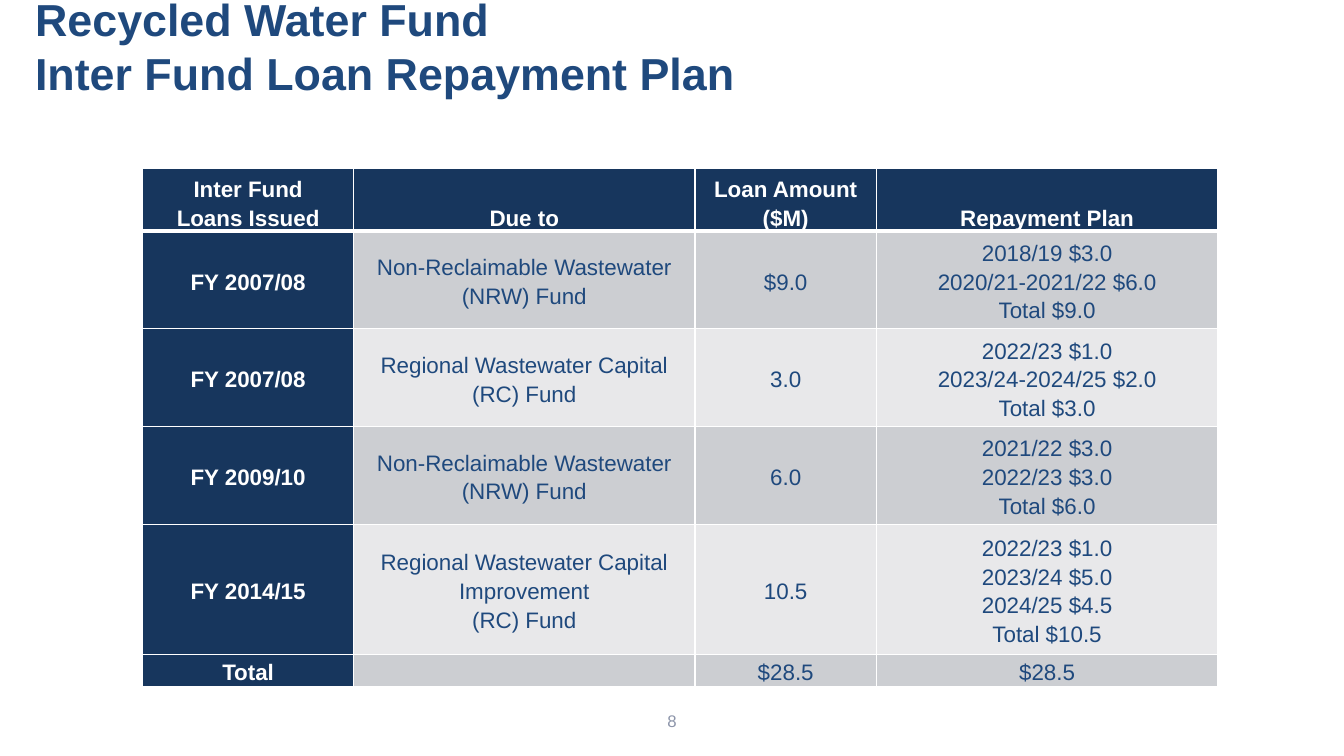
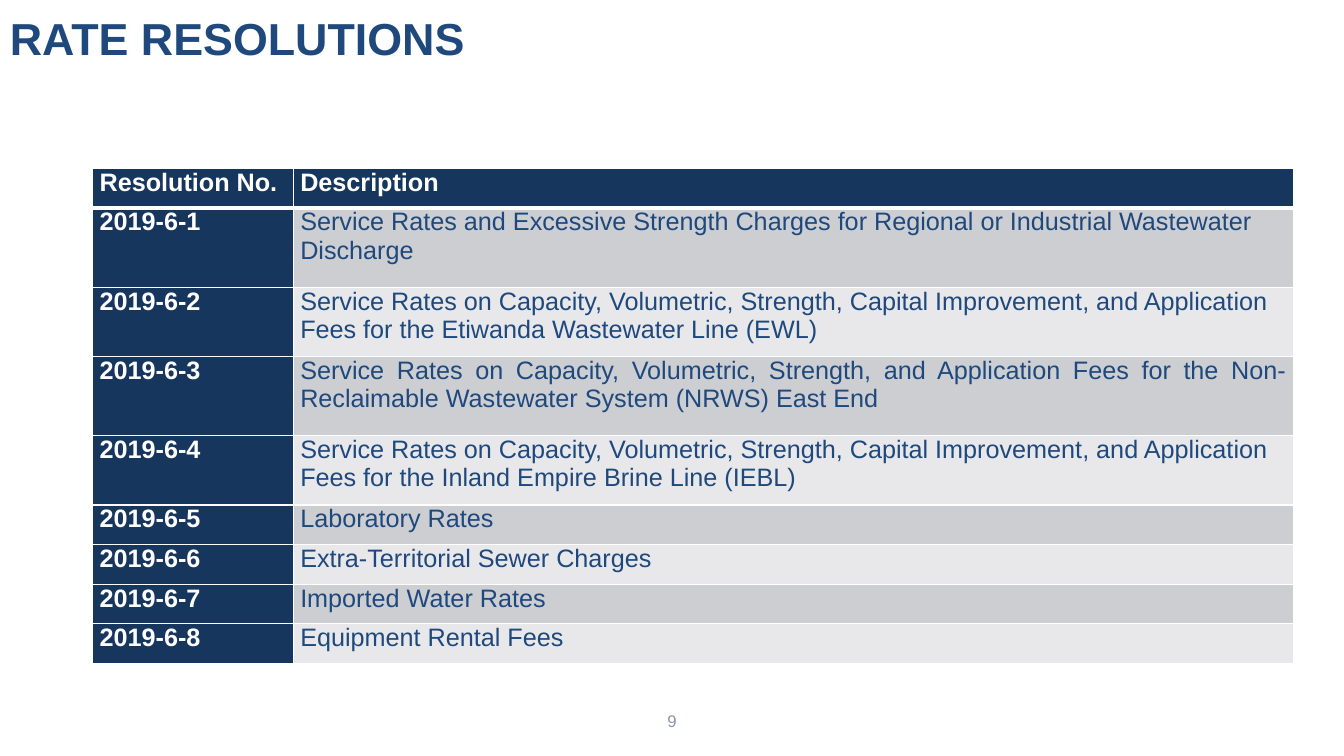
from lxml.etree import SubElement
from pptx import Presentation
from pptx.dml.color import RGBColor
from pptx.enum.text import MSO_ANCHOR, PP_ALIGN
from pptx.oxml.ns import qn
from pptx.util import Pt

COLOURS = {
    "navy": "17365D",
    "blue": "1F497D",
    "white": "FFFFFF",
    "dark band": "CCCED2",
    "light band": "E8E8EA",
    "page number": "8D95AA",
}
FONT = "Arial"
TITLE_SIZE = (864, 90)
NUMBER_BOX = (368, 504, 224, 28.8)
TABLE_TOP = 120.24

LOAN_STYLE = {
    "size": 16,
    "align": PP_ALIGN.CENTER,
    "spacing": 1.15,
    "header anchor": MSO_ANCHOR.BOTTOM,
    "anchor": MSO_ANCHOR.MIDDLE,
    "margins": {"margin_left": 5.4, "margin_right": 5.4, "margin_top": 0.7, "margin_bottom": 0},
}
RESOLUTION_STYLE = {
    "size": 18,
    "align": PP_ALIGN.LEFT,
    "spacing": None,
    "header anchor": MSO_ANCHOR.TOP,
    "anchor": MSO_ANCHOR.TOP,
    "margins": {"margin_left": 5, "margin_right": 5, "margin_top": 0, "margin_bottom": 0},
}

LOAN_ROWS = [
    ("Inter Fund\nLoans Issued", "Due to", "Loan Amount\n($M)", "Repayment Plan"),
    ("FY 2007/08", "Non-Reclaimable Wastewater (NRW) Fund", "$9.0",
     "2018/19 $3.0\n2020/21-2021/22 $6.0\nTotal $9.0"),
    ("FY 2007/08", "Regional Wastewater Capital (RC) Fund", "3.0",
     "2022/23 $1.0\n2023/24-2024/25 $2.0\nTotal $3.0"),
    ("FY 2009/10", "Non-Reclaimable Wastewater (NRW) Fund", "6.0",
     "2021/22 $3.0\n2022/23 $3.0\nTotal $6.0"),
    ("FY 2014/15", "Regional Wastewater Capital Improvement\n(RC) Fund", "10.5",
     "2022/23 $1.0\n2023/24 $5.0\n2024/25 $4.5\nTotal $10.5"),
    ("Total", "", "$28.5", "$28.5"),
]
RESOLUTIONS = [
    "Service Rates and Excessive Strength Charges for Regional or Industrial Wastewater Discharge",
    "Service Rates on Capacity, Volumetric, Strength, Capital Improvement, and Application "
    "Fees for the Etiwanda Wastewater Line (EWL)",
    "Service Rates on Capacity, Volumetric, Strength, and Application Fees for the "
    "Non-Reclaimable Wastewater System (NRWS) East End",
    "Service Rates on Capacity, Volumetric, Strength, Capital Improvement, and Application "
    "Fees for the Inland Empire Brine Line (IEBL)",
    "Laboratory Rates",
    "Extra-Territorial Sewer Charges",
    "Imported Water Rates",
    "Equipment Rental Fees",
]
RESOLUTION_ROWS = [("Resolution No.", "Description")] + [
    (f"2019-6-{number}", text) for number, text in enumerate(RESOLUTIONS, 1)
]


def colour(name):
    return RGBColor.from_string(COLOURS[name])


def write_para(para, text, size, ink, bold=False, align=PP_ALIGN.LEFT, spacing=None):
    para.alignment = align
    para.line_spacing = spacing
    if not text:
        SubElement(para._p, qn("a:endParaRPr"), sz=str(size * 100))
        return
    para.text = text
    for span in para.runs:
        for name, value in {"name": FONT, "size": Pt(size), "bold": bold}.items():
            setattr(span.font, name, value)
        span.font.color.rgb = colour(ink)


def add_text(page, box, text, size, ink, anchor, **formats):
    frame = page.shapes.add_textbox(*map(Pt, box)).text_frame
    frame.word_wrap = True
    frame.vertical_anchor = anchor
    write_para(frame.paragraphs[0], text, size, ink, **formats)


def set_borders(cell, widths):
    properties = cell._tc.get_or_add_tcPr()
    for side, width in widths.items():
        line = SubElement(properties, qn(f"a:ln{side}"), w=str(Pt(width)))
        fill = SubElement(line, qn("a:solidFill"))
        SubElement(fill, qn("a:srgbClr"), val=COLOURS["white"])


def fill_cell(cell, text, row, column, style, align):
    header = row == 0
    label = header or column == 0
    set_borders(cell, {"L": 1, "R": 1, "T": 3 if row == 1 else 1, "B": 3 if header else 1})
    cell.fill.solid()
    band = "dark band" if row % 2 else "light band"
    cell.fill.fore_color.rgb = colour("navy" if label else band)
    cell.vertical_anchor = style["header anchor" if header else "anchor"]
    for name, value in style["margins"].items():
        setattr(cell, name, Pt(value))
    frame = cell.text_frame
    for index, line in enumerate(text.split("\n")):
        para = frame.add_paragraph() if index else frame.paragraphs[0]
        write_para(para, line, style["size"], "white" if label else "blue",
                   label, align, style["spacing"])


def add_grid(page, left, top, widths, heights, rows, style, aligns=None):
    box = (left, top, sum(widths), sum(heights))
    table = page.shapes.add_table(len(rows), len(widths), *map(Pt, box)).table
    table.horz_banding = False
    for column, width in zip(table.columns, widths):
        column.width = Pt(width)
    for row, height in zip(table.rows, heights):
        row.height = Pt(height)
    for row, texts in enumerate(rows):
        for column, text in enumerate(texts):
            align = (aligns or {}).get((row, column), style["align"])
            fill_cell(table.cell(row, column), text, row, column, style, align)


def add_page(deck, title, left, top, number):
    page = deck.slides.add_slide(deck.slide_layouts[6])
    add_text(page, (left, top, *TITLE_SIZE), title, 32, "blue", MSO_ANCHOR.MIDDLE, bold=True)
    add_text(page, NUMBER_BOX, number, 12, "page number", MSO_ANCHOR.TOP, align=PP_ALIGN.CENTER)
    return page


def add_loan_page(deck):
    page = add_page(deck, "Recycled Water Fund\vInter Fund Loan Repayment Plan", 18, -12.24, "8")
    add_grid(page, 102, TABLE_TOP, (150.5, 244, 129.5, 244),
             (44.5, 69.84, 69.84, 69.84, 93, 21.8), LOAN_ROWS, LOAN_STYLE)


def add_resolution_page(deck):
    page = add_page(deck, "RATE RESOLUTIONS", 0, -18, "9")
    short, medium, tall = 28.3, 49.5, 56.6
    heights = [short, tall, medium, tall, medium] + [short] * 4
    add_grid(page, 66.2, TABLE_TOP, (143.3, 714.5), heights, RESOLUTION_ROWS,
             RESOLUTION_STYLE, {(3, 1): PP_ALIGN.JUSTIFY})


def main():
    deck = Presentation()
    deck.slide_width, deck.slide_height = Pt(960), Pt(540)
    add_loan_page(deck)
    add_resolution_page(deck)
    deck.save("out.pptx")


if __name__ == "__main__":
    main()
